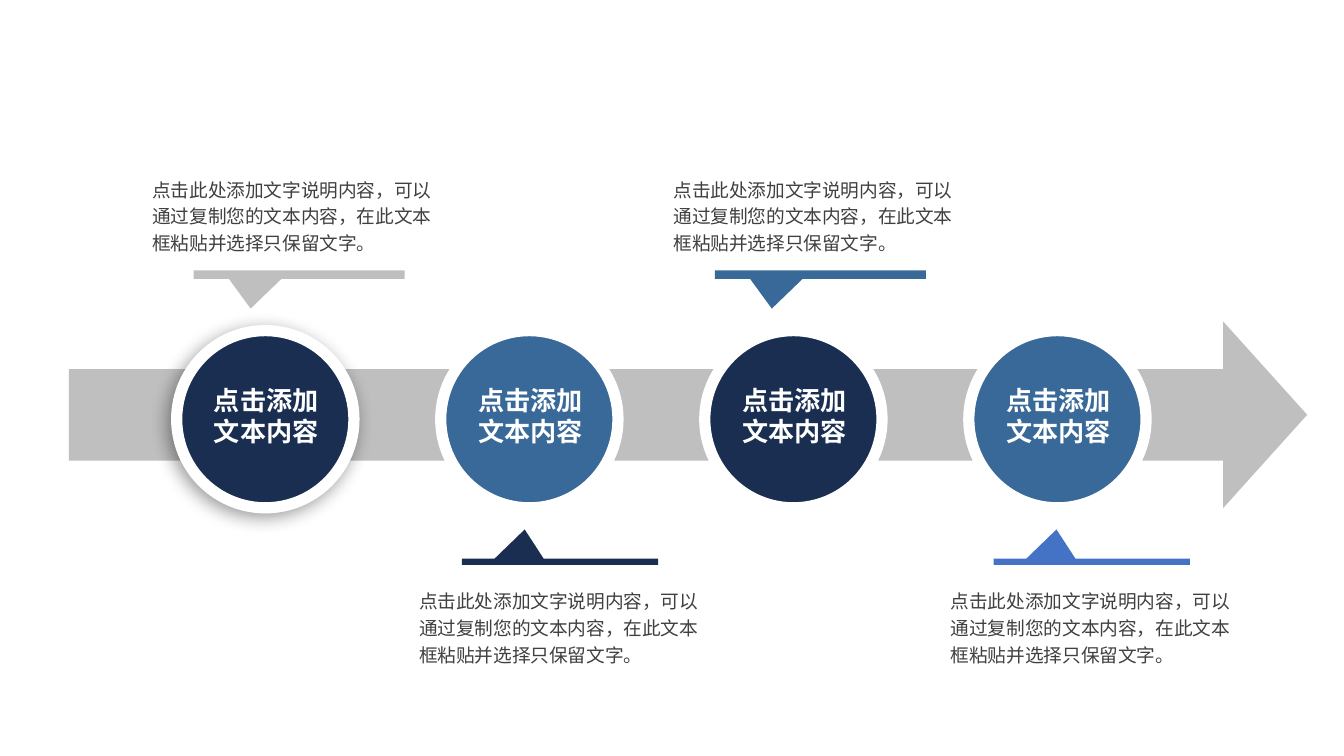
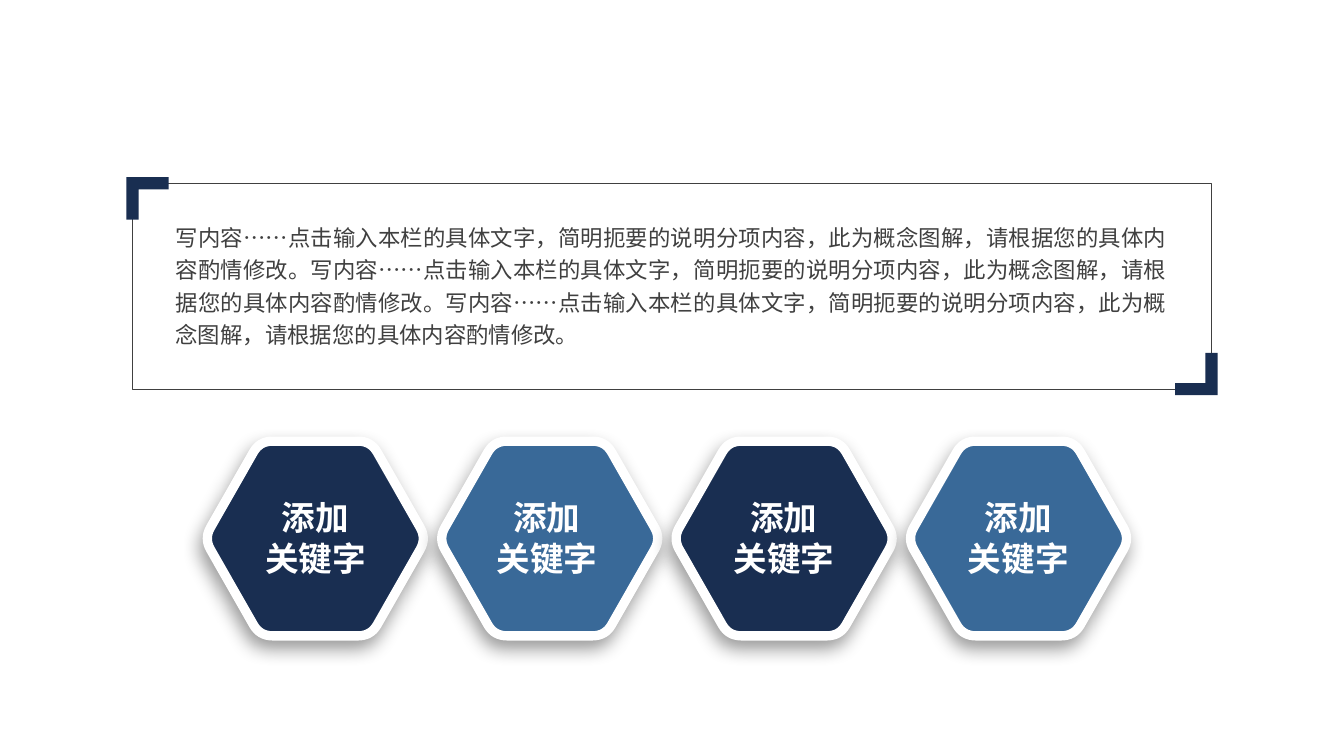
"""Build two slides: an arrow timeline with four stages and a framed text with four keywords."""
from math import hypot

from lxml.etree import SubElement
from pptx import Presentation
from pptx.dml.color import RGBColor
from pptx.enum.shapes import MSO_SHAPE as SHAPE
from pptx.enum.text import MSO_AUTO_SIZE as AUTO_SIZE, PP_ALIGN as ALIGN
from pptx.oxml.ns import qn
from pptx.util import Cm, Pt

COLORS = {
    "navy": "192E51",
    "steel": "396998",
    "blue": "4472C4",
    "gray": "BFBFBF",
    "text": "404040",
    "white": "FFFFFF",
    "shadow": "000000",
}
FONT = "Noto Sans CJK SC"
STAGE_COLORS = ["navy", "steel", "navy", "steel"]


def paint(shape, fill=None, line=None, width=0, shadow=None):
    if fill:
        shape.fill.solid()
        shape.fill.fore_color.rgb = RGBColor.from_string(COLORS[fill])
    else:
        shape.fill.background()
    if line:
        shape.line.color.rgb = RGBColor.from_string(COLORS[line])
        shape.line.width = Pt(width)
    else:
        shape.line.fill.background()
    shape.shadow.inherit = False
    if shadow:
        distance, angle = shadow
        effects = shape._element.spPr.find(qn("a:effectLst"))
        outer = SubElement(effects, qn("a:outerShdw"), blurRad=str(Pt(10)),
                           dist=str(Pt(distance)), dir=str(angle * 60000),
                           algn="ctr", rotWithShape="0")
        tint = SubElement(outer, qn("a:srgbClr"), val=COLORS["shadow"])
        SubElement(tint, qn("a:alpha"), val="40000")


def write(shapes, box, text, size, color, align, bold=False, spacing=None,
          inset=None, grow=True):
    textbox = shapes.add_textbox(*[Cm(length) for length in box])
    frame = textbox.text_frame
    frame.word_wrap = True
    frame.auto_size = AUTO_SIZE.SHAPE_TO_FIT_TEXT if grow else AUTO_SIZE.NONE
    if inset is not None:
        frame.margin_left = frame.margin_right = Cm(inset[0])
        frame.margin_top = frame.margin_bottom = Cm(inset[1])
    frame.text = text
    for paragraph in frame.paragraphs:
        paragraph.alignment = align
        paragraph.line_spacing = spacing
        for run in paragraph.runs:
            run.font.size = Pt(size)
            run.font.bold = bold
            run.font.name = FONT
            run.font.color.rgb = RGBColor.from_string(COLORS[color])
            SubElement(run._r.get_or_add_rPr(), qn("a:ea"), typeface=FONT)


prs = Presentation()
prs.slide_width, prs.slide_height = Cm(25.4), Cm(14.29)
blank = prs.slide_layouts[6]

timeline = prs.slides.add_slide(blank)
arrow = timeline.shapes.add_shape(SHAPE.DOWN_ARROW, Cm(11.24), Cm(-3.86), Cm(3.53), Cm(23.4))
arrow.rotation = 270
arrow.adjustments[0], arrow.adjustments[1] = 0.49, 0.45
paint(arrow, "gray")

for index, color in enumerate(STAGE_COLORS):
    left = 3.34 + 4.99 * index
    stage = timeline.shapes.add_group_shape()
    circle = stage.shapes.add_shape(SHAPE.OVAL, Cm(left), Cm(6.25), Cm(3.35), Cm(3.35))
    paint(circle, color, "white", 6, (3, 135) if index == 0 else None)
    write(stage.shapes, (left - 0.44, 7.14, 4.27, 1.37), "点击添加\n文本内容",
          14, "white", ALIGN.CENTER, bold=True, grow=False)

NOTE = "点击此处添加文字说明内容，可以通过复制您的文本内容，在此文本框粘贴并选择只保留文字。"
ABOVE = (5.11, 3.99, 0.16, -0.23, 4.03, 1.02, 3.17)
BELOW = (10.56, 3.71, 0.12, -0.18, -5.1, 1.05, 10.95)
notes = [(3.66, "gray", ABOVE), (8.73, "navy", BELOW),
         (13.51, "steel", ABOVE), (18.78, "blue", BELOW)]
for left, color, (top, width, height, tip_x, tip_y, overhang, note_top) in notes:
    pointer = timeline.shapes.add_shape(SHAPE.RECTANGULAR_CALLOUT, Cm(left), Cm(top),
                                        Cm(width), Cm(height))
    pointer.adjustments[0], pointer.adjustments[1] = tip_x, tip_y
    paint(pointer, color)
    write(timeline.shapes, (left - overhang, note_top, 5.8, 1.78), NOTE, 10, "text",
          ALIGN.LEFT, spacing=1.2, inset=(0.24, 0.12))

keywords = prs.slides.add_slide(blank)
border = keywords.shapes.add_shape(SHAPE.ROUNDED_RECTANGLE, Cm(2.5), Cm(3.47), Cm(20.4), Cm(3.88))
border.adjustments[0] = 0
paint(border, line="text", width=0.25)
SUMMARY = "写内容……点击输入本栏的具体文字，简明扼要的说明分项内容，此为概念图解，请根据您的具体内容酌情修改。"
write(keywords.shapes, (3.32, 4.14, 18.75, 2.41), SUMMARY * 3, 12, "text",
      ALIGN.JUSTIFY, spacing=1.2, inset=(0, 0))

BRACKET = [(0, 0), (0.8, 0), (0.8, 0.23), (0.23, 0.23), (0.23, 0.8), (0, 0.8)]
for left, top, turn in [(2.39, 3.35, 0), (22.21, 6.67, 180)]:
    outline = [(Cm(left + x), Cm(top + y)) for x, y in BRACKET]
    builder = keywords.shapes.build_freeform(*outline[0])
    builder.add_line_segments(outline[1:])
    bracket = builder.convert_to_shape()
    bracket.rotation = turn
    paint(bracket, "navy")

CORNERS = [(2.1, 0), (1.05, 1.84), (-1.05, 1.84), (-2.1, 0), (-1.05, -1.84), (1.05, -1.84)]
TRIM, STEPS = 0.24, 8
hexagon = []
for index, (x, y) in enumerate(CORNERS):
    ends = []
    for near_x, near_y in (CORNERS[index - 1], CORNERS[(index + 1) % 6]):
        share = TRIM / hypot(near_x - x, near_y - y)
        ends.append((x + (near_x - x) * share, y + (near_y - y) * share))
    (start_x, start_y), (end_x, end_y) = ends
    for step in range(STEPS + 1):
        t = step / STEPS
        hexagon.append(((1 - t) ** 2 * start_x + 2 * t * (1 - t) * x + t ** 2 * end_x,
                        (1 - t) ** 2 * start_y + 2 * t * (1 - t) * y + t ** 2 * end_y))

LABEL_LEFTS = [4.62, 8.99, 13.47, 17.9]
for index, (color, label_left) in enumerate(zip(STAGE_COLORS, LABEL_LEFTS)):
    center_x, center_y = 5.96 + 4.43 * index, 10.18
    outline = [(Cm(center_x + x), Cm(center_y + y)) for x, y in hexagon]
    builder = keywords.shapes.build_freeform(*outline[0])
    builder.add_line_segments(outline[1:])
    paint(builder.convert_to_shape(), color, "white", 5, (5, 110))
    write(keywords.shapes, (label_left, 9.4, 2.69, 1.55), "添加\n关键字",
          18, "white", ALIGN.CENTER, bold=True, inset=(0, 0))

prs.save("out.pptx")
